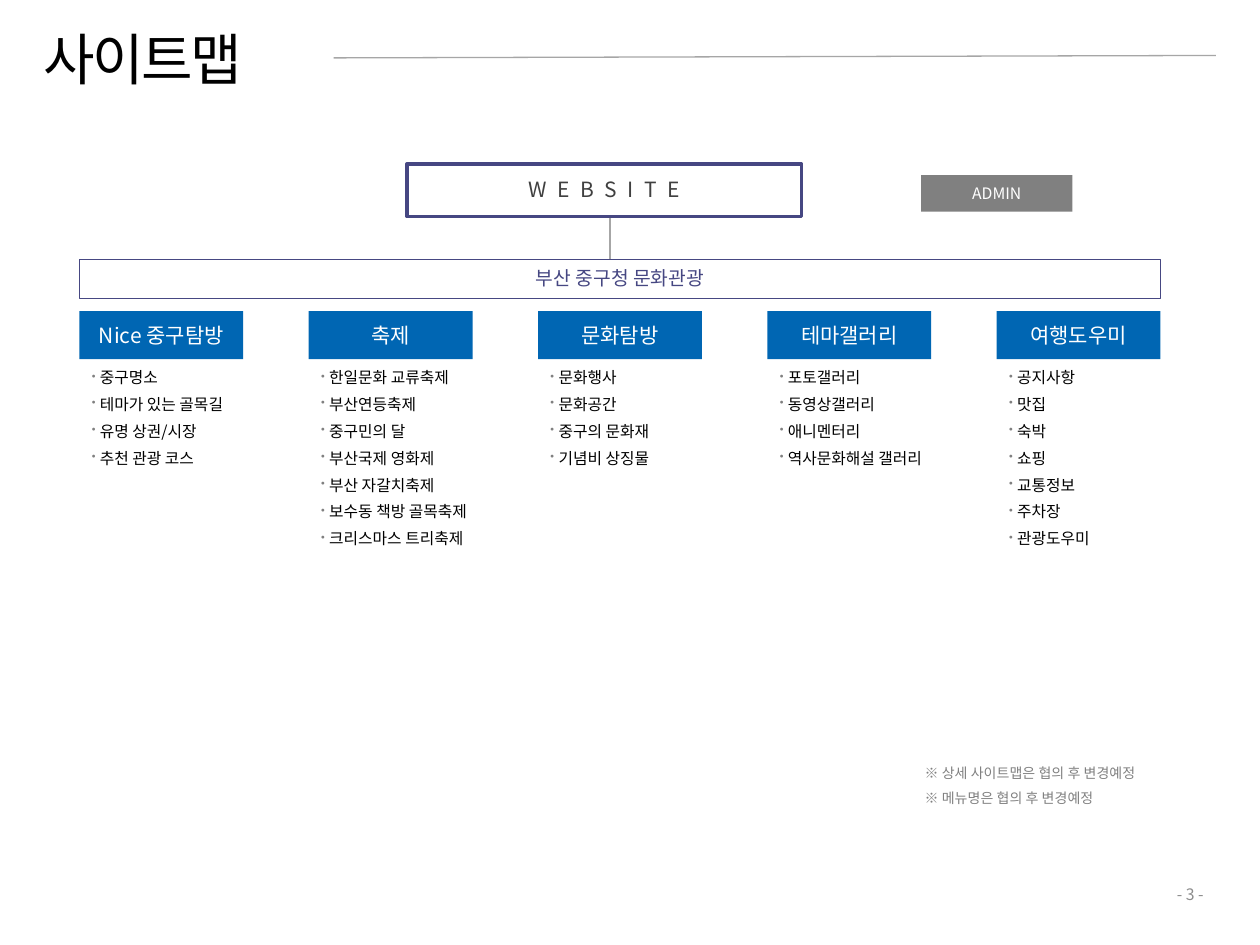
from lxml import etree
from pptx import Presentation
from pptx.dml.color import RGBColor
from pptx.enum import shapes, text
from pptx.oxml import ns
from pptx.util import Pt

FONT = "Noto Sans CJK KR"
BLACK = RGBColor(0x00, 0x00, 0x00)
WHITE = RGBColor(0xFF, 0xFF, 0xFF)
CHARCOAL = RGBColor(0x40, 0x40, 0x40)
GRAY = RGBColor(0x80, 0x80, 0x80)
PAGE_GRAY = RGBColor(0x8C, 0x8C, 0x8C)
LINE_GRAY = RGBColor(0xA6, 0xA6, 0xA6)
INDIGO = RGBColor(0x46, 0x47, 0x82)
BLUE = RGBColor(0x00, 0x66, 0xB3)

LEFT, CENTER, RIGHT = text.PP_ALIGN.LEFT, text.PP_ALIGN.CENTER, text.PP_ALIGN.RIGHT
TOP, MIDDLE = text.MSO_ANCHOR.TOP, text.MSO_ANCHOR.MIDDLE

MENUS = [
    ("Nice 중구탐방", ["중구명소", "테마가 있는 골목길", "유명 상권/시장", "추천 관광 코스"]),
    ("축제", ["한일문화 교류축제", "부산연등축제", "중구민의 달", "부산국제 영화제",
            "부산 자갈치축제", "보수동 책방 골목축제", "크리스마스 트리축제"]),
    ("문화탐방", ["문화행사", "문화공간", "중구의 문화재", "기념비 상징물"]),
    ("테마갤러리", ["포토갤러리", "동영상갤러리", "애니멘터리", "역사문화해설 갤러리"]),
    ("여행도우미", ["공지사항", "맛집", "숙박", "쇼핑", "교통정보", "주차장", "관광도우미"]),
]
FOOTNOTES = ["※ 상세 사이트맵은 협의 후 변경예정", "※ 메뉴명은 협의 후 변경예정"]


def write(frame, lines, size, color, align=LEFT, anchor=TOP, spacing=None,
          tracking=0, insets=(7.2, 3.6, 7.2, 3.6)):
    """Fill a text frame with uniformly styled paragraphs and return them."""
    frame.word_wrap = True
    frame.vertical_anchor = anchor
    frame.margin_left, frame.margin_top, frame.margin_right, frame.margin_bottom = map(Pt, insets)
    frame.text = "\n".join(lines)
    for paragraph in frame.paragraphs:
        paragraph.alignment = align
        if spacing:
            paragraph.line_spacing = spacing
        font = paragraph.font
        font.name, font.size = FONT, Pt(size)
        font.color.rgb = color
        style = paragraph._p.pPr.find(ns.qn("a:defRPr"))
        etree.SubElement(style, ns.qn("a:ea"), typeface=FONT)
        if tracking:
            style.set("spc", str(round(tracking * 100)))
    return frame.paragraphs


def space_before_half(paragraph):
    """Put half a line of space before a paragraph."""
    before = etree.Element(ns.qn("a:spcBef"))
    etree.SubElement(before, ns.qn("a:spcPct"), val="50000")
    paragraph._p.pPr.find(ns.qn("a:defRPr")).addprevious(before)


def add_bullet(paragraph):
    """Give a paragraph a small gray bullet with a hanging indent."""
    properties = paragraph._p.pPr
    properties.set("marL", str(Pt(4.6)))
    properties.set("indent", str(-Pt(4.6)))
    color = etree.Element(ns.qn("a:buClr"))
    etree.SubElement(color, ns.qn("a:srgbClr"), val=str(GRAY))
    size = etree.Element(ns.qn("a:buSzPct"), val="70000")
    mark = etree.Element(ns.qn("a:buChar"), char="•")
    for part in (color, size, mark):
        properties.find(ns.qn("a:defRPr")).addprevious(part)


def add_text(slide, box, lines, size, color, **options):
    """Place a text box and return its paragraphs."""
    frame = slide.shapes.add_textbox(*map(Pt, box)).text_frame
    return write(frame, lines, size, color, **options)


def add_label(slide, box, label, size, color, fill, border=0, **options):
    """Place a rectangle with a centred label."""
    block = slide.shapes.add_shape(shapes.MSO_SHAPE.RECTANGLE, *map(Pt, box))
    block.shadow.inherit = False
    block.fill.solid()
    block.fill.fore_color.rgb = fill
    if border:
        block.line.color.rgb = INDIGO
        block.line.width = Pt(border)
    else:
        block.line.fill.background()
    for paragraph in write(block.text_frame, [label], size, color, align=CENTER,
                           anchor=MIDDLE, insets=(7.2, 2.9, 7.2, 2.9), **options):
        space_before_half(paragraph)


def add_rule(slide, start, end, width):
    """Draw a thin gray straight line."""
    rule = slide.shapes.add_connector(shapes.MSO_CONNECTOR.STRAIGHT, *map(Pt, start + end))
    rule.line.color.rgb = LINE_GRAY
    rule.line.width = Pt(width)
    etree.SubElement(rule._element.spPr, ns.qn("a:effectLst"))


def add_heading(slide, left, top, width, height):
    """Place the slide title and the rule to its right."""
    add_text(slide, (left, top, 138.2, height), ["사이트맵"], 32, BLACK,
             anchor=MIDDLE, tracking=-1.5)
    add_rule(slide, (left + 138.2 + 34.5, top + 23), (left + width, top + 21.6), 0.75)


def add_root(slide, left, top, width, height):
    """Place the website box, its link, the admin box and the site banner."""
    middle = left + 303.1
    banner_top = top + height - 22.3
    add_rule(slide, (middle, top + 23), (middle, banner_top), 1)
    add_label(slide, (left + 187.2, top, 225.4, 30.2), "WEBSITE", 12, CHARCOAL, WHITE,
              border=2, spacing=0.9, tracking=6)
    add_label(slide, (left + 481, top + 6.5, 86.4, 20.9), "ADMIN", 9, WHITE, GRAY)
    add_label(slide, (left, banner_top, width, 22.3), "부산 중구청 문화관광", 11, INDIGO, WHITE,
              border=1, spacing=0.9)


def add_menu(slide, left, top, width, height, title, items):
    """Place one menu header with its bulleted pages below."""
    header = 27.4
    add_label(slide, (left, top, width, header), title, 12, WHITE, BLUE)
    pages = add_text(slide, (left, top + header + 2.2, width, height - header - 2.2), items,
                     9, BLACK, insets=(7.2, 2.9, 0, 2.9))
    for page in pages:
        space_before_half(page)
        add_bullet(page)


def add_menus(slide, left, top, width, height):
    """Spread the menus evenly across the box."""
    column = 93.6
    pitch = (width - column) / (len(MENUS) - 1)
    for index, (title, items) in enumerate(MENUS):
        add_menu(slide, left + index * pitch, top, column, height, title, items)


def build():
    """Build and save the sitemap slide."""
    deck = Presentation()
    deck.slide_width, deck.slide_height = Pt(720), Pt(540)
    slide = deck.slides.add_slide(deck.slide_layouts[6])
    add_heading(slide, 18, 10.1, 676.8, 46.1)
    add_root(slide, 45.4, 93.6, 617.8, 77)
    add_menus(slide, 45.4, 177.8, 617.8, 148.4)
    add_text(slide, (521.3, 428.4, 161.3, 36), FOOTNOTES, 8, GRAY, spacing=1.5)
    add_text(slide, (607, 502.6, 87.8, 17.3), ["- 3 -"], 9, PAGE_GRAY, align=RIGHT, anchor=MIDDLE)
    deck.save("out.pptx")


if __name__ == "__main__":
    build()
